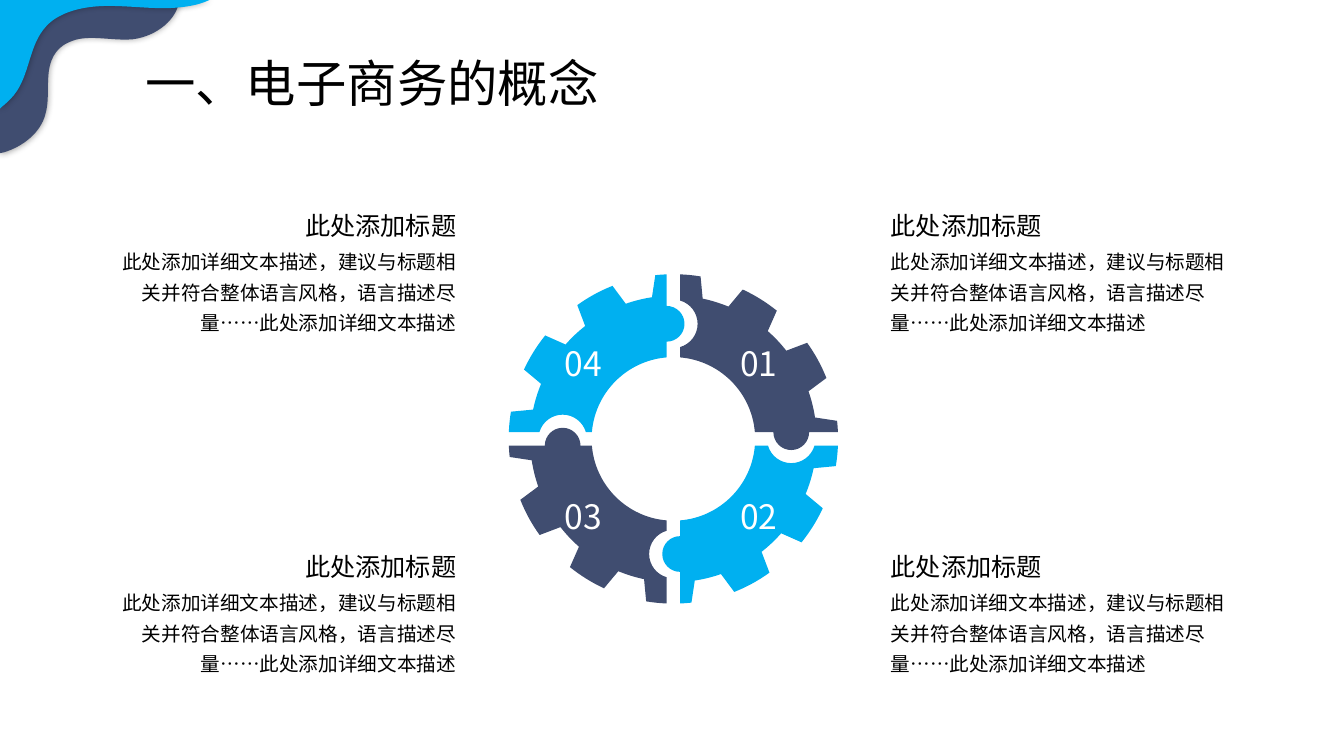
import math
from dataclasses import dataclass

import pptx
import pptx.dml.color
import pptx.enum.text
import pptx.oxml
import pptx.oxml.ns
import pptx.util
from lxml import etree

Cm = pptx.util.Cm
Align = pptx.enum.text.PP_ALIGN
tag = pptx.oxml.ns.qn


@dataclass(frozen=True)
class Theme:
    font: str = "Noto Sans CJK SC"
    navy: str = "404D70"
    cyan: str = "00B0F0"
    ink: str = "000000"
    white: str = "FFFFFF"
    title: int = 36
    label: int = 24
    head: int = 18
    body: int = 14


THEME = Theme()
HEAD = "此处添加标题"
BODY = "此处添加详细文本描述，建议与标题相关并符合整体语言风格，语言描述尽量……此处添加详细文本描述"

# Corner waves in cm: lines (2 numbers) and curves (6 numbers)
WAVES = [
    (THEME.navy, [
        (1.35, 0), (4.52, 0),
        (4.47, 0.48, 3.96, 0.91, 3.35, 0.99),
        (2.79, 1.04, 2.18, 0.84, 1.73, 1.07),
        (1.37, 1.22, 1.24, 1.57, 1.22, 1.9),
        (1.19, 2.24, 1.24, 2.57, 1.14, 2.9),
        (1.02, 3.33, 0.61, 3.68, 0.1, 3.84),
        (0, 3.86), (0, 2.13), (0.13, 2.06),
        (0.36, 1.9, 0.56, 1.73, 0.69, 1.52),
        (0.94, 1.09, 0.99, 0.58, 1.22, 0.18)]),
    (THEME.cyan, [
        (0, 0), (5.28, 0), (5.16, 0.05),
        (4.9, 0.15, 4.62, 0.18, 4.37, 0.2),
        (3.84, 0.23, 3.3, 0.15, 2.74, 0.15),
        (2.21, 0.15, 1.65, 0.25, 1.27, 0.56),
        (0.74, 1.02, 0.79, 1.73, 0.43, 2.29),
        (0.33, 2.44, 0.2, 2.57, 0.05, 2.69),
        (0, 2.74)]),
]


def put(item, values):
    for name, value in values.items():
        setattr(item, name, value)


def write(shapes, box, text, size, color=THEME.ink, **form):
    area = shapes.add_textbox(*map(Cm, box))
    frame = area.text_frame
    put(frame, {"word_wrap": True,
                "auto_size": pptx.enum.text.MSO_AUTO_SIZE.SHAPE_TO_FIT_TEXT})
    para = frame.paragraphs[0]
    put(para, form)
    run = para.add_run()
    run.text = text
    run.font.color.rgb = pptx.dml.color.RGBColor.from_string(color)
    put(run.font, {"size": pptx.util.Pt(size), "name": THEME.font})
    # East Asian glyphs take their own font element
    etree.SubElement(run.font._element, tag("a:ea"), typeface=THEME.font)


def trace(shapes, parts, color, left, top):
    """Draw an outline of lines (one point) and curves (three points)."""
    spots = [(Cm(left + x), Cm(top + y)) for part in parts for x, y in part]
    maker = shapes.build_freeform(*spots[0])
    maker.add_line_segments(spots[1:], close=True)
    shape = maker.convert_to_shape()
    shape.shadow.inherit = False
    shape.fill.solid()
    shape.fill.fore_color.rgb = pptx.dml.color.RGBColor.from_string(color)
    shape.line.fill.background()
    # Join each set of three points into one curve
    track = next(shape._element.iter(tag("a:path")))
    lines = iter(track.findall(tag("a:lnTo")))
    for part in parts[1:]:
        group = [next(lines) for _ in part]
        if len(part) == 3:
            bend = etree.SubElement(track, tag("a:cubicBezTo"))
            group[0].addprevious(bend)
            for line in group:
                bend.append(line[0])
                track.remove(line)
    return shape


def glow(shape):
    soft = pptx.oxml.parse_xml(
        f'<a:outerShdw {pptx.oxml.ns.nsdecls("a")} blurRad="63500" dist="0" dir="0">'
        '<a:srgbClr val="000000"><a:alpha val="40000"/></a:srgbClr></a:outerShdw>')
    shape._element.spPr.find(tag("a:effectLst")).append(soft)


def corner(shapes, box):
    for color, rows in WAVES:
        parts = [list(zip(row[::2], row[1::2])) for row in rows]
        glow(trace(shapes, parts, color, *box))


def arc(midx, midy, radius, start, end, count=1):
    """Line to the start, then curves; degrees run clockwise from the right."""
    step = math.radians(end - start) / count
    pull = 4 / 3 * math.tan(step / 4)

    def spot(turn, lean=0):
        cos, sin = math.cos(turn), math.sin(turn)
        return midx + radius * (cos - lean * sin), midy + radius * (sin + lean * cos)

    turns = [math.radians(start) + step * i for i in range(count + 1)]
    return [[spot(turns[0])]] + [
        [spot(a, pull), spot(b, -pull), spot(b)] for a, b in zip(turns, turns[1:])]


def quarter(socket, knob):
    """Upper right quarter of the gear, around its centre."""
    tip, root, hole, gap = 4.15, 3.61, 2.06, 0.17
    first, pitch, crest, foot = 2.5, 29.4, 7, 9.3
    edge = math.degrees(math.asin(gap / tip))
    parts = []
    # Teeth and the valleys between them
    for i in range(4):
        mid = first + pitch * i
        low, high = max(mid - crest, edge), min(mid + crest, 90 - edge)
        parts += arc(0, 0, tip, low - 90, high - 90)
        if i < 3:
            parts += arc(0, 0, root, mid + foot - 90, mid + pitch - foot - 90)
    # Knob, hole and socket
    parts += arc(knob, -gap, 0.45, 0, 180, 2)
    inner = math.degrees(math.asin(gap / hole))
    parts += arc(0, 0, hole, -inner, inner - 90)
    bite = 0.61
    bend = math.degrees(math.acos(gap / bite))
    return parts + arc(0, -socket, bite, bend, -bend, 2)


def gear(shapes, box):
    left, top, width, height = box
    midx, midy = left + width / 2, top + height / 2
    joints = [2.9, 2.97, 2.9, 2.79]
    for i in (3, 0, 2, 1):
        parts = quarter(joints[i], joints[(i + 1) % 4])
        for _ in range(i):
            parts = [[(-y, x) for x, y in part] for part in parts]
        trace(shapes, parts, THEME.cyan if i % 2 else THEME.navy, midx, midy)
    # Numbers run clockwise from the upper right
    wide, high = 1.55, 1.27
    for i, (dx, dy) in enumerate([(1, -1), (1, 1), (-1, 1), (-1, -1)], 1):
        spot = (midx + 2.21 * dx - wide / 2, midy + 0.02 + 1.92 * dy - high / 2)
        write(shapes, (*spot, wide, high), f"{i:02}", THEME.label, THEME.white)


def card(shapes, box, align):
    left, top, width, height = box
    group = shapes.add_group_shape().shapes
    drop, wide = 0.83, 5.69
    write(group, (left, top + drop, width, height - drop), BODY, THEME.body,
          alignment=align, line_spacing=1.3)
    if align == Align.RIGHT:
        left += width - wide
    write(group, (left, top, wide, 1.02), HEAD, THEME.head, alignment=align)


def main():
    deck = pptx.Presentation()
    put(deck, {"slide_width": Cm(33.87), "slide_height": Cm(19.05)})
    shapes = deck.slides.add_slide(deck.slide_layouts[6]).shapes
    corner(shapes, (0, 0))
    write(shapes, (3.41, 0.97, 12.78, 1.93), "一、电子商务的概念", THEME.title,
          line_spacing=1.14)
    gear(shapes, (12.82, 6.91, 8.3, 8.3))
    for top in (5.17, 13.76):
        for left, align in ((22.2, Align.LEFT), (2.68, Align.RIGHT)):
            card(shapes, (left, top, 9.07, 3.37), align)
    deck.save("out.pptx")


if __name__ == "__main__":
    main()
